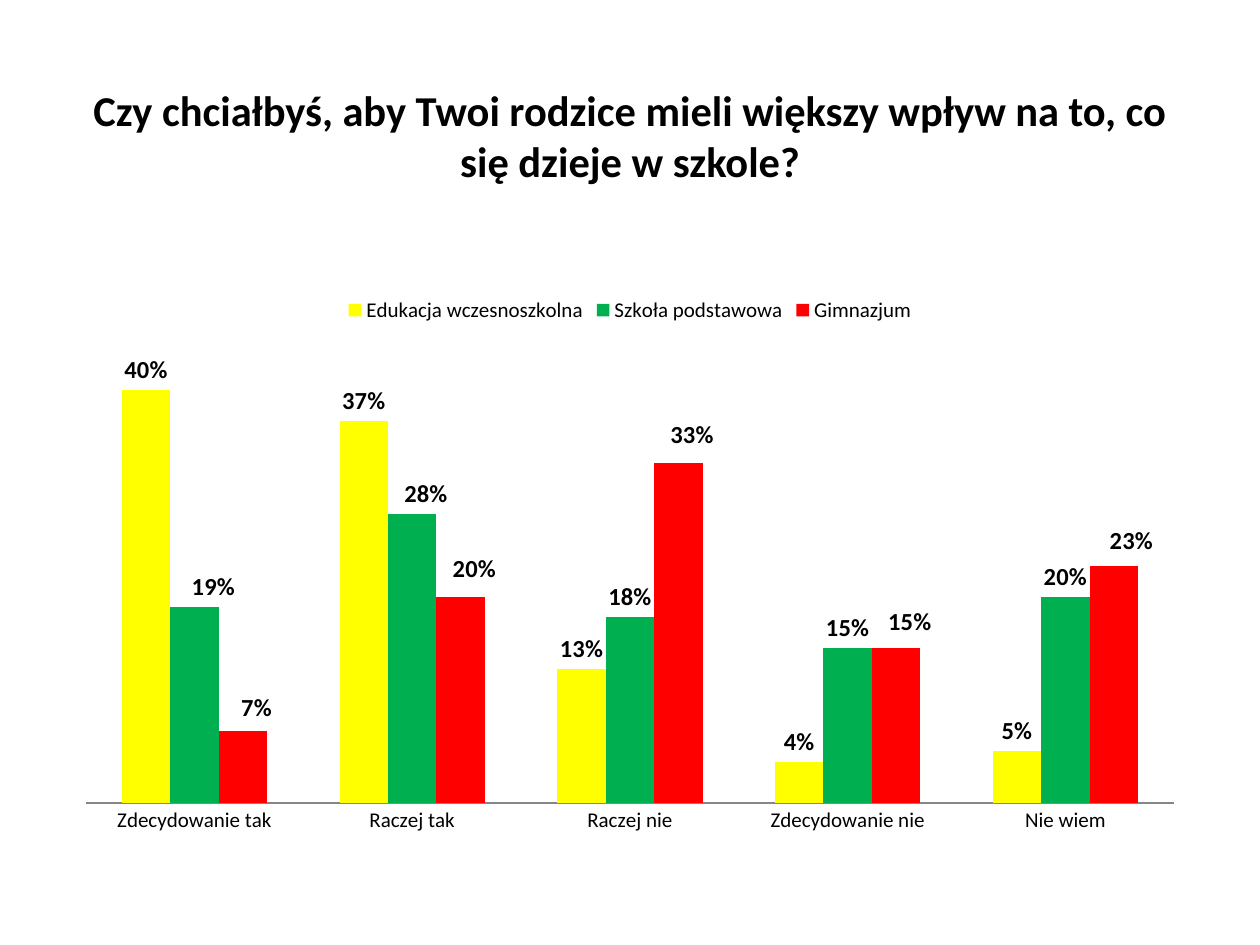
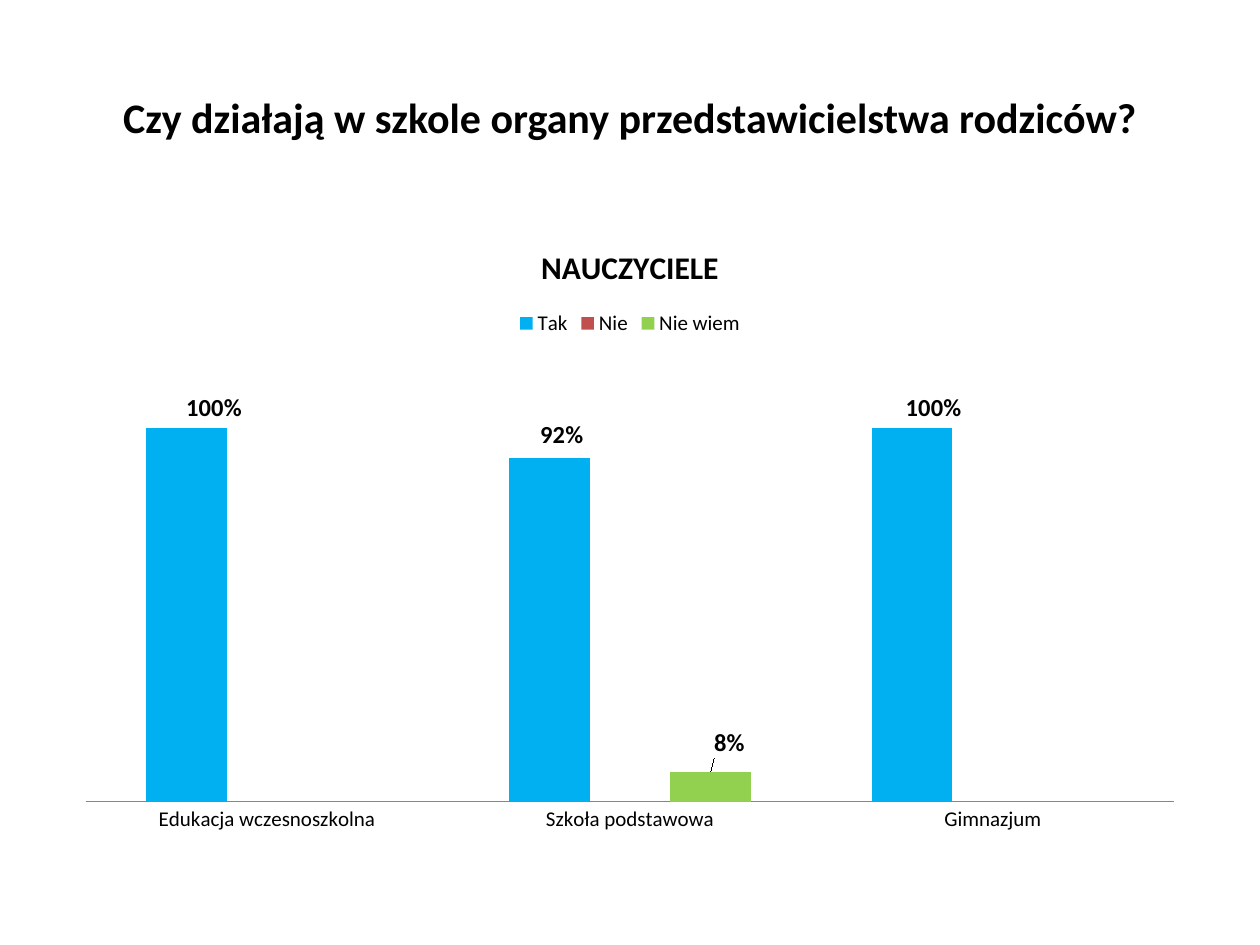
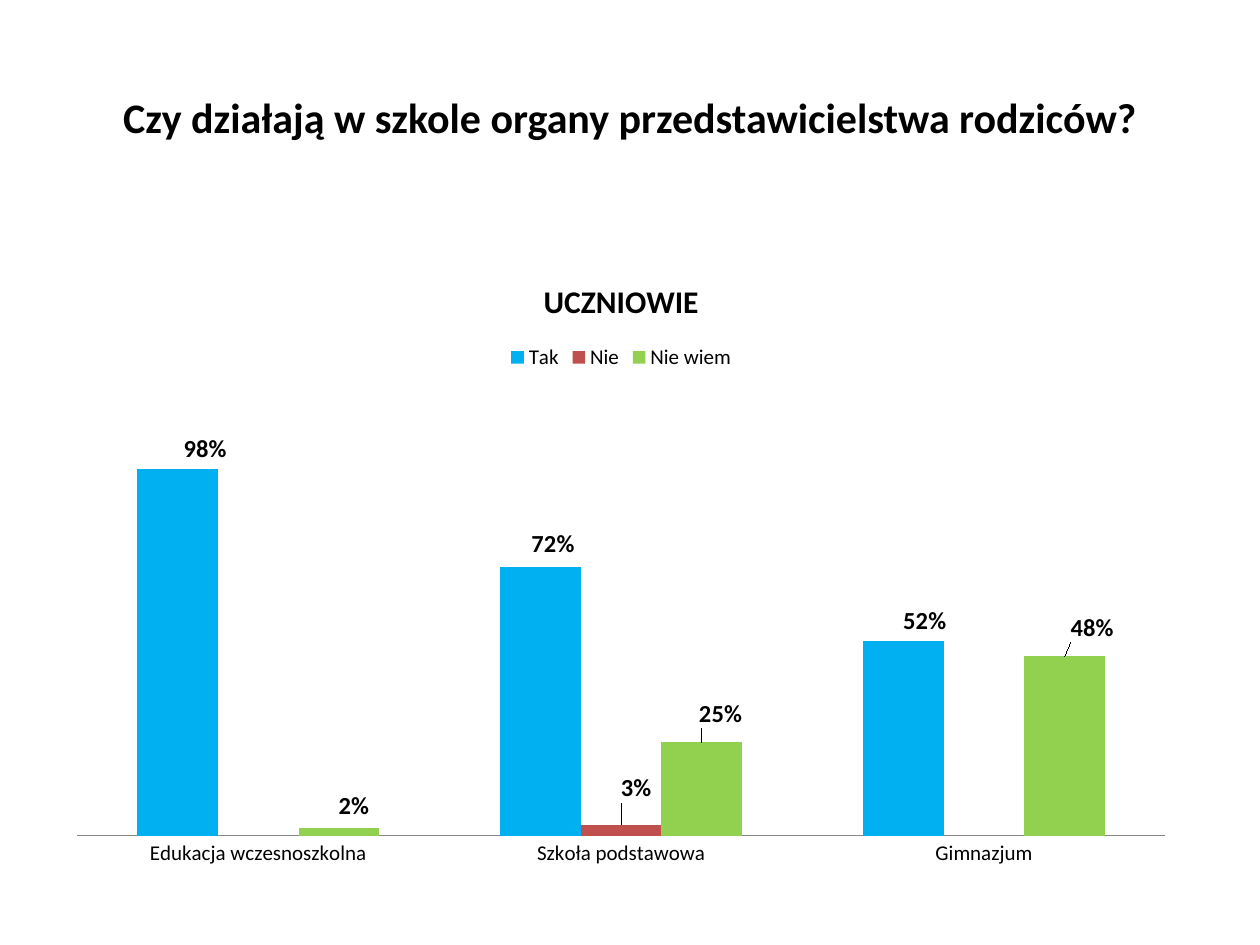
from lxml import etree
from pptx import Presentation
from pptx.chart.data import CategoryChartData
from pptx.dml.color import RGBColor
from pptx.enum.chart import XL_CHART_TYPE, XL_LABEL_POSITION, XL_LEGEND_POSITION, XL_TICK_MARK
from pptx.enum.text import MSO_ANCHOR, PP_ALIGN
from pptx.oxml.ns import qn
from pptx.util import Inches, Pt

COLUMNS = XL_CHART_TYPE.COLUMN_CLUSTERED
ABOVE_BAR = XL_LABEL_POSITION.OUTSIDE_END
LEGEND_TOP = XL_LEGEND_POSITION.TOP
NO_TICK = XL_TICK_MARK.NONE
CENTER, MIDDLE = PP_ALIGN.CENTER, MSO_ANCHOR.MIDDLE

FONT = "Calibri"
BLACK, AXIS_GREY = "000000", "868686"
YELLOW, GREEN, RED = "FFFF00", "00B050", "FF0000"
SKY, BRICK, LIME = "00B0F0", "C0504D", "92D050"

SCHOOLS = ["Edukacja wczesnoszkolna", "Szkoła podstawowa", "Gimnazjum"]
ANSWERS = ["Zdecydowanie tak", "Raczej tak", "Raczej nie", "Zdecydowanie nie", "Nie wiem"]
COUNCIL_QUESTION = "Czy działają w szkole organy przedstawicielstwa rodziców?"
COUNCIL_TITLE_BOX = (0.5, 0.3, 9, 1.25)

# Each series: name, colour, values, label shifts {point: (right, down)} in inches
SLIDES = [
    {
        "question": "Czy chciałbyś, aby Twoi rodzice mieli większy wpływ na to, co się dzieje w szkole?",
        "title_box": (0.5, 0.84, 9, 1.1), "title_size": 24.3, "title_raise": 0.64,
        "chart_box": (0.5, 2.25, 9, 4.45), "chart_title": None, "axis_max": 0.45,
        "categories": ANSWERS,
        "series": [
            (SCHOOLS[0], YELLOW, [0.4, 0.37, 0.13, 0.04, 0.05], {}),
            (SCHOOLS[1], GREEN, [0.19, 0.28, 0.18, 0.15, 0.2],
             {0: (0.15, 0), 1: (0.11, 0)}),
            (SCHOOLS[2], RED, [0.07, 0.2, 0.33, 0.15, 0.23],
             {0: (0.11, -0.02), 1: (0.11, -0.06), 2: (0.11, -0.06),
              3: (0.11, -0.05), 4: (0.14, -0.04)}),
        ],
    },
    {
        "question": COUNCIL_QUESTION,
        "title_box": COUNCIL_TITLE_BOX, "title_size": 24, "title_raise": 0,
        "chart_box": (0.5, 1.75, 9, 4.95), "chart_title": "NAUCZYCIELE", "axis_max": 1.2,
        "categories": SCHOOLS,
        "series": [
            ("Tak", SKY, [1, 0.92, 1], {0: (0.22, 0), 1: (0.1, -0.02), 2: (0.17, 0)}),
            ("Nie", BRICK, [None, None, None], {}),
            ("Nie wiem", LIME, [None, 0.08, None], {1: (0.15, -0.07)}),
        ],
    },
    {
        "question": COUNCIL_QUESTION,
        "title_box": COUNCIL_TITLE_BOX, "title_size": 24, "title_raise": 0,
        "chart_box": (0.43, 2.02, 9, 4.95), "chart_title": "UCZNIOWIE", "axis_max": 1.2,
        "categories": SCHOOLS,
        "series": [
            ("Tak", SKY, [0.98, 0.72, 0.52], {0: (0.22, 0), 1: (0.1, -0.02), 2: (0.17, 0)}),
            ("Nie", BRICK, [None, 0.03, None], {1: (0.12, -0.13)}),
            ("Nie wiem", LIME, [0.02, 0.25, 0.48],
             {0: (0.12, -0.02), 1: (0.15, -0.07), 2: (0.22, -0.07)}),
        ],
    },
]


def color(hex_string):
    return RGBColor.from_string(hex_string)


def style_font(font, size, bold=False):
    font.name, font.size, font.bold = FONT, Pt(size), bold
    font.color.rgb = color(BLACK)


def write_title(page, content):
    title = page.shapes.title
    title.left, title.top, title.width, title.height = map(Inches, content["title_box"])
    frame = title.text_frame
    frame.text = content["question"]
    frame.vertical_anchor = MIDDLE
    frame.margin_bottom = Inches(0.05 + content["title_raise"])
    para = frame.paragraphs[0]
    para.alignment = CENTER
    style_font(para.font, content["title_size"], bold=True)


def shift_label(series, index, across, down):
    """Move one data label by fractions of the chart's width and height."""
    label = series.points[index].data_label
    label.position = ABOVE_BAR
    style_font(label.font, 14, bold=True)
    for node in series._element.iter(qn("c:dLbl")):
        number = node.find(qn("c:idx"))
        if number.get("val") == str(index):
            layout = etree.Element(qn("c:layout"))
            manual = etree.SubElement(layout, qn("c:manualLayout"))
            for axis, value in (("x", across), ("y", down)):
                etree.SubElement(manual, qn(f"c:{axis}")).set("val", f"{value:.4f}")
            number.addnext(layout)


def style_series(series, fill, shifts, chart_size):
    series.format.fill.solid()
    series.format.fill.fore_color.rgb = color(fill)
    series.invert_if_negative = False
    labels = series.data_labels
    labels.show_value = True
    labels.number_format, labels.number_format_is_linked = "0%", False
    labels.position = ABOVE_BAR
    style_font(labels.font, 14, bold=True)
    width, height = chart_size
    for index, (right, down) in shifts.items():
        shift_label(series, index, right / width, down / height)


def style_axes(chart, maximum):
    categories, values = chart.category_axis, chart.value_axis
    categories.major_tick_mark = categories.minor_tick_mark = NO_TICK
    categories.format.line.color.rgb = color(AXIS_GREY)
    categories.format.line.width = Pt(0.75)
    style_font(categories.tick_labels.font, 12)
    values.minimum_scale, values.maximum_scale = 0, maximum
    values.has_major_gridlines = False
    values.tick_labels.number_format = "0%"
    values.tick_labels.number_format_is_linked = False
    values.visible = False


def add_answer_chart(page, content):
    data = CategoryChartData(number_format="0%")
    data.categories = content["categories"]
    for name, _, values, _ in content["series"]:
        data.add_series(name, values)
    box = content["chart_box"]
    chart = page.shapes.add_chart(COLUMNS, *map(Inches, box), data).chart
    style_font(chart.font, 10)

    chart.has_title = content["chart_title"] is not None
    if chart.has_title:
        frame = chart.chart_title.text_frame
        frame.text = content["chart_title"]
        style_font(frame.paragraphs[0].font, 18, bold=True)
        chart.chart_title.include_in_layout = False
    chart.has_legend = True
    chart.legend.position = LEGEND_TOP
    chart.legend.include_in_layout = False
    style_font(chart.legend.font, 12)

    style_axes(chart, content["axis_max"])
    plot = chart.plots[0]
    plot.vary_by_categories = False
    plot.gap_width, plot.overlap = 150, 0
    for series, (_, fill, _, shifts) in zip(plot.series, content["series"]):
        style_series(series, fill, shifts, box[2:])


def main():
    deck = Presentation()
    deck.slide_width, deck.slide_height = Inches(10), Inches(7.5)
    title_only = deck.slide_layouts[5]
    for content in SLIDES:
        page = deck.slides.add_slide(title_only)
        write_title(page, content)
        add_answer_chart(page, content)
    deck.save("out.pptx")


if __name__ == "__main__":
    main()
